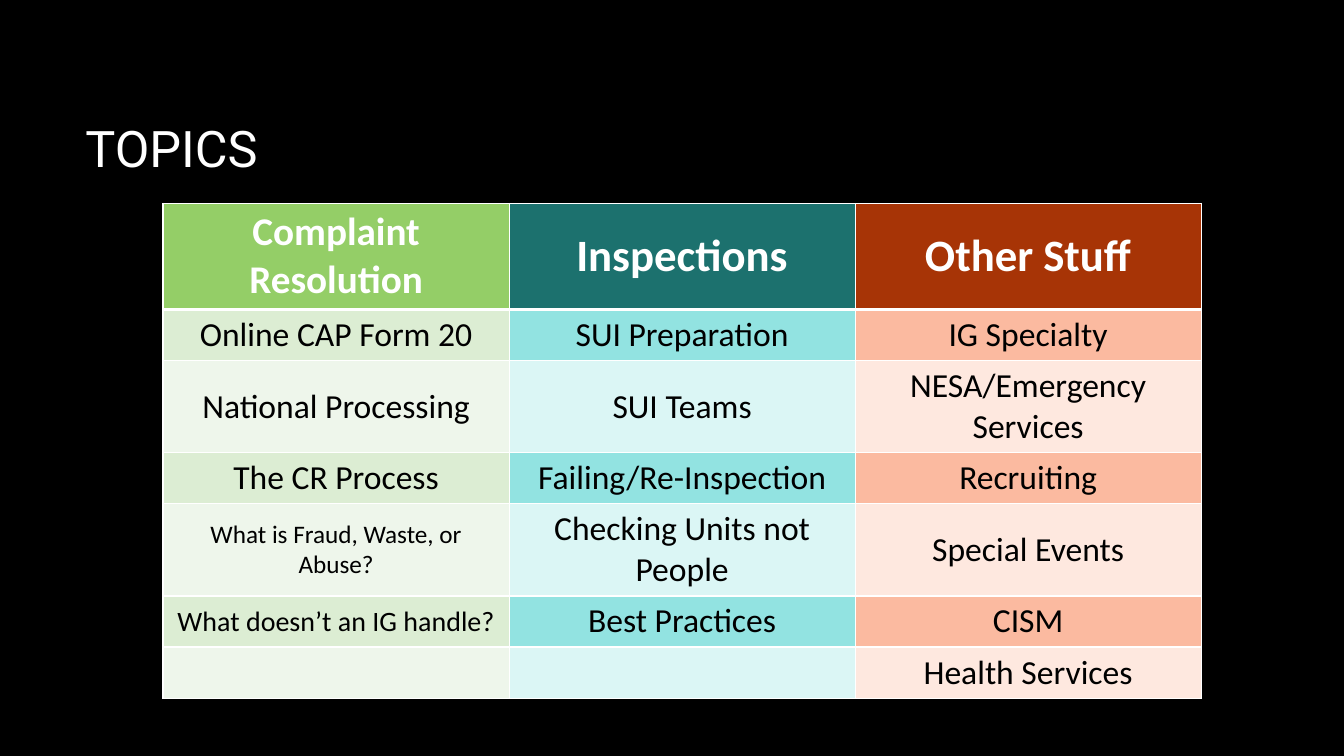
from lxml import etree
from pptx import Presentation
from pptx.dml.color import RGBColor
from pptx.enum import text
from pptx.oxml import ns
from pptx.util import Cm, Pt

BLACK = RGBColor(0x00, 0x00, 0x00)
WHITE = RGBColor(0xFF, 0xFF, 0xFF)
GREEN = RGBColor(0x94, 0xCE, 0x67)
GREEN_MID = RGBColor(0xDC, 0xED, 0xD3)
GREEN_PALE = RGBColor(0xEE, 0xF6, 0xEB)
TEAL = RGBColor(0x1C, 0x71, 0x6E)
TEAL_MID = RGBColor(0x92, 0xE3, 0xE1)
TEAL_PALE = RGBColor(0xDB, 0xF6, 0xF5)
RUST = RGBColor(0xA7, 0x34, 0x06)
RUST_MID = RGBColor(0xFB, 0xBA, 0xA0)
RUST_PALE = RGBColor(0xFE, 0xE8, 0xDF)

TITLE = "TOPICS"
ROWS = [
    ("Complaint Resolution", "Inspections", "Other Stuff"),
    ("Online CAP Form 20", "SUI Preparation", "IG Specialty"),
    ("National Processing", "SUI Teams", "NESA/Emergency Services"),
    ("The CR Process", "Failing/Re-Inspection", "Recruiting"),
    ("What is Fraud, Waste, or Abuse?", "Checking Units not People", "Special Events"),
    ("What doesn’t an IG handle?", "Best Practices", "CISM"),
    ("", "", "Health Services"),
]
COLUMN_FILLS = [
    (GREEN, GREEN_MID, GREEN_PALE),
    (TEAL, TEAL_MID, TEAL_PALE),
    (RUST, RUST_MID, RUST_PALE),
]
HEADER_SIZE, BODY_SIZE = 32, 24
SPECIAL_SIZES = {(0, 0): 28, (4, 0): 18, (5, 0): 20}
COLUMN_WIDTH, ROW_HEIGHT = Cm(8.72), Cm(1.04)
TITLE_PLACE = {"left": Cm(1.9), "top": Cm(1.7), "width": Cm(28.14), "height": Cm(4.04)}
TITLE_FONT = {"name": "Roboto", "size": Pt(36), "bold": False}


def format_font(font, values, color):
    for name, value in values.items():
        setattr(font, name, value)
    font.color.rgb = color


def add_borders(cell, row):
    properties = cell._tc.get_or_add_tcPr()
    widths = {"lnL": 1, "lnR": 1, "lnT": 3 if row == 1 else 1, "lnB": 3 if row == 0 else 1}
    for position, (side, width) in enumerate(widths.items()):
        line = etree.Element(ns.qn(f"a:{side}"), w=str(Pt(width)))
        fill = etree.SubElement(line, ns.qn("a:solidFill"))
        etree.SubElement(fill, ns.qn("a:srgbClr"), val=str(WHITE))
        properties.insert(position, line)


def fill_cell(cell, row, column):
    header = row == 0
    shades = COLUMN_FILLS[column]
    cell.fill.solid()
    cell.fill.fore_color.rgb = shades[0 if header else 2 - row % 2]
    cell.vertical_anchor = text.MSO_ANCHOR.MIDDLE
    add_borders(cell, row)
    if ROWS[row][column]:
        para = cell.text_frame.paragraphs[0]
        para.alignment = text.PP_ALIGN.CENTER
        span = para.add_run()
        span.text = ROWS[row][column]
        size = SPECIAL_SIZES.get((row, column), HEADER_SIZE if header else BODY_SIZE)
        values = {"name": "Calibri", "size": Pt(size), "bold": header}
        format_font(span.font, values, WHITE if header else BLACK)


def main():
    deck = Presentation()
    deck.slide_width, deck.slide_height = Cm(33.87), Cm(19.05)
    page = deck.slides.add_slide(deck.slide_layouts[5])
    page.background.fill.solid()
    page.background.fill.fore_color.rgb = BLACK

    title = page.shapes.title
    for name, value in TITLE_PLACE.items():
        setattr(title, name, value)
    title.text_frame.text = TITLE
    title.text_frame.vertical_anchor = text.MSO_ANCHOR.MIDDLE
    para = title.text_frame.paragraphs[0]
    para.alignment = text.PP_ALIGN.LEFT
    format_font(para.runs[0].font, TITLE_FONT, WHITE)

    row_count, column_count = len(ROWS), len(COLUMN_FILLS)
    table = page.shapes.add_table(
        row_count, column_count, Cm(4.11), Cm(5.13),
        COLUMN_WIDTH * column_count, ROW_HEIGHT * row_count,
    ).table
    for row in range(row_count):
        for column in range(column_count):
            fill_cell(table.cell(row, column), row, column)
    deck.save("out.pptx")


if __name__ == "__main__":
    main()
